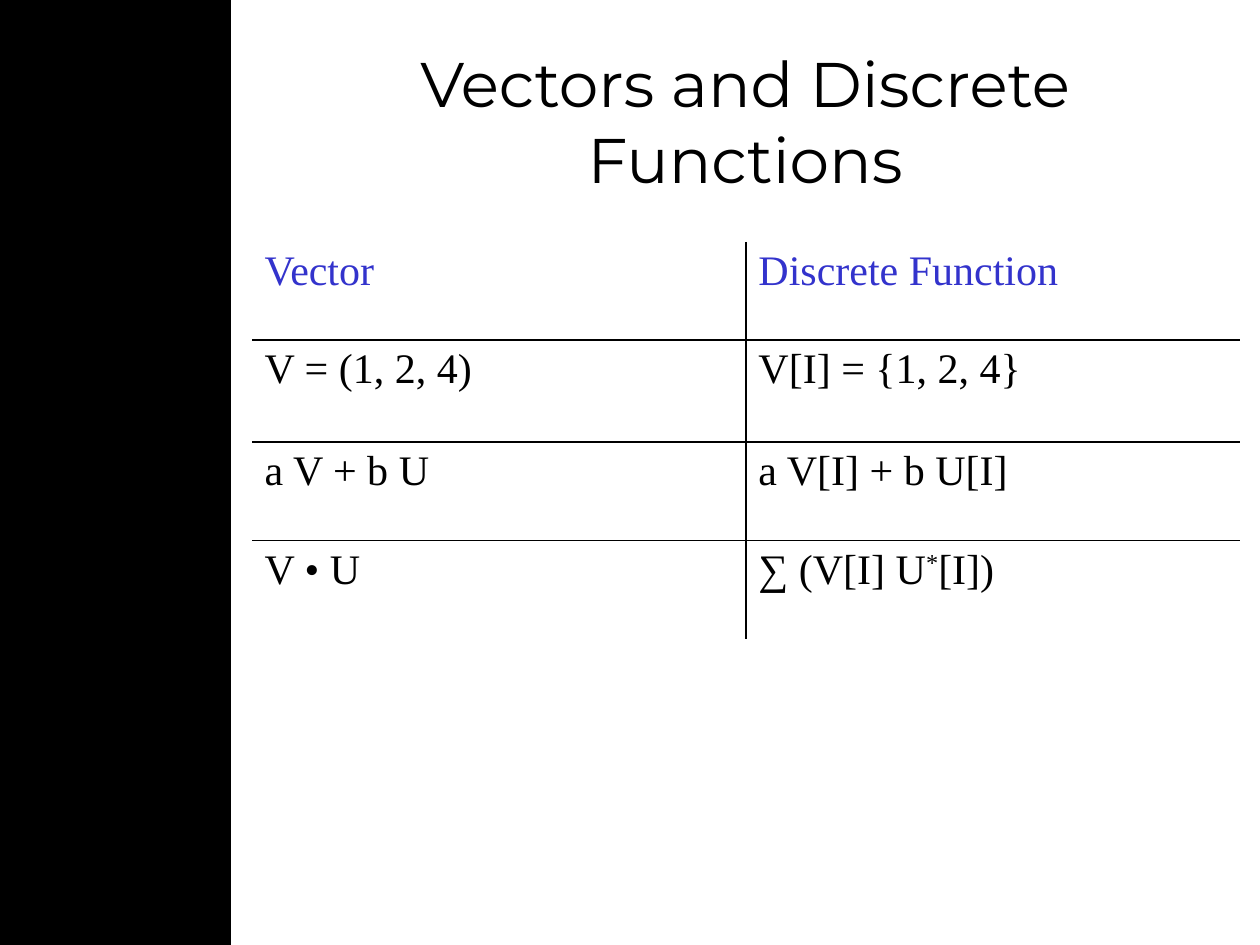
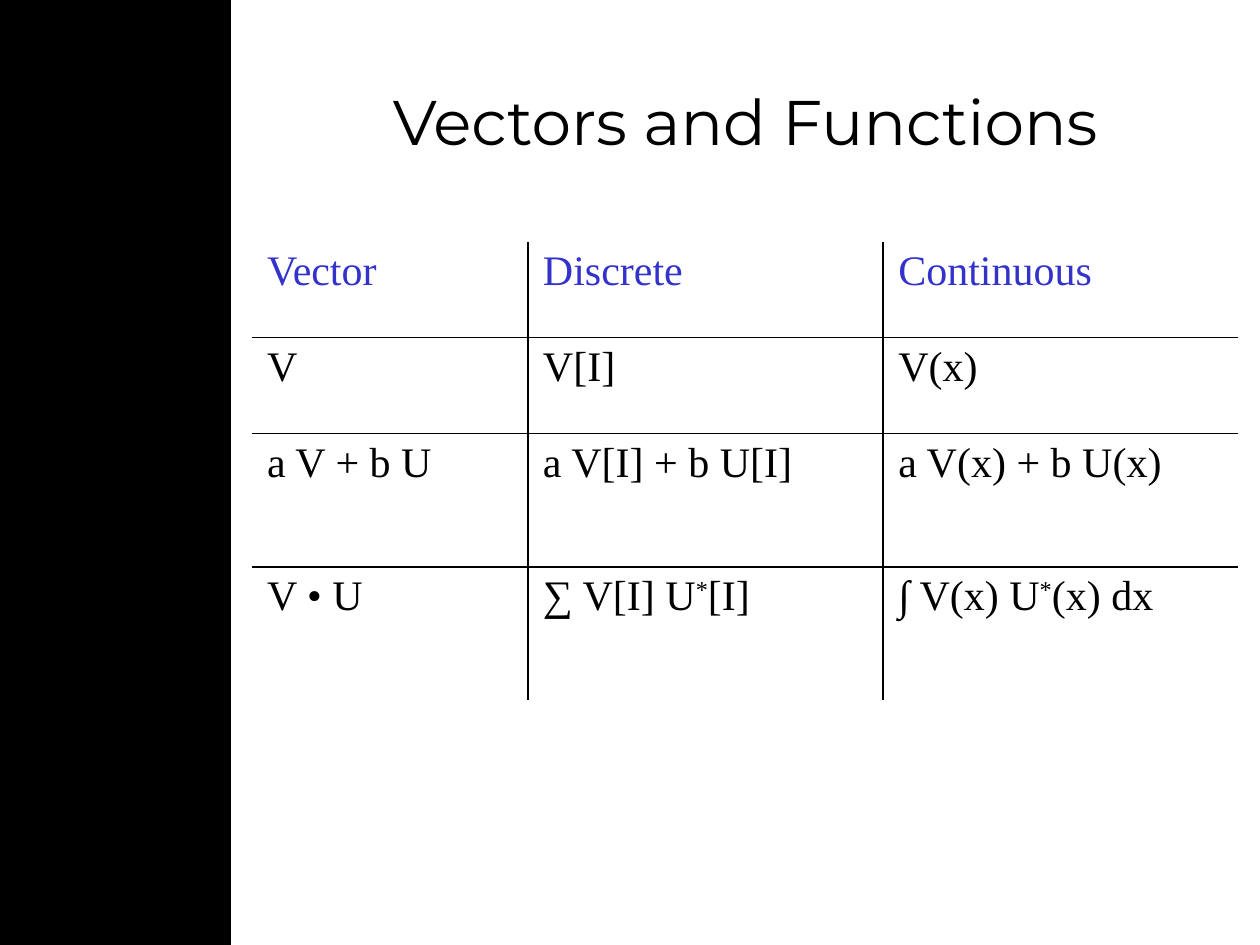
from lxml.etree import SubElement
from pptx import Presentation
from pptx.dml.color import RGBColor
from pptx.enum.shapes import MSO_SHAPE
from pptx.enum.text import MSO_ANCHOR, PP_ALIGN
from pptx.oxml.ns import qn
from pptx.util import Inches, Pt

# Content: column and row sizes in inches
SLIDES = [
    {
        "title": "Vectors and Discrete Functions",
        "cols": [3.92, 3.92], "rows": [0.78, 0.81, 0.78, 0.78], "inset": 0.1,
        "cells": [
            ["Vector", "Discrete Function"],
            ["V = (1, 2, 4)", "V[I] = {1, 2, 4}"],
            ["a V + b U", "a V[I] + b U[I]"],
            ["V • U", "∑ (V[I] U*[I])"],
        ],
    },
    {
        "title": "Vectors and Functions",
        "cols": [2.19, 2.82, 2.82], "rows": [0.76, 0.76, 1.06, 1.06], "inset": 0.12,
        "cells": [
            ["Vector", "Discrete", "Continuous"],
            ["V", "V[I]", "V(x)"],
            ["a V + b U", "a V[I] + b U[I]", "a V(x) + b U(x)"],
            ["V • U", "∑ V[I] U*[I]", "∫ V(x) U*(x) dx"],
        ],
    },
]

# Shared style
COLORS = {"paper": "FFFFFF", "ink": "000000", "header": "3333CC"}
TITLE_FONT, BODY_FONT = "Montserrat", "Times New Roman"
WIDTH, HEIGHT = 10, 7.5
BAND_W = 1.83
LEFT, CONTENT_W = 2, 7.83
TITLE_TOP, TITLE_H, TABLE_TOP = 0.33, 1.25, 1.92


def rgb(name):
    return RGBColor.from_string(COLORS[name])


def add_run(p, text, font, size, color, raised=False):
    r = p.add_run()
    r.text = text
    r.font.name, r.font.size = font, Pt(size)
    r.font.color.rgb = rgb(color)
    if raised:
        r.font._element.set("baseline", "30000")


def add_band(s):
    sp = s.shapes.add_shape(MSO_SHAPE.RECTANGLE, 0, 0, Inches(BAND_W), Inches(HEIGHT))
    sp.shadow.inherit = False
    sp.fill.solid()
    sp.fill.fore_color.rgb = rgb("ink")
    sp.line.color.rgb = rgb("ink")
    sp.line.width = Pt(0.75)


def add_title(s, text):
    box = s.shapes.add_textbox(Inches(LEFT), Inches(TITLE_TOP),
                               Inches(CONTENT_W), Inches(TITLE_H))
    tf = box.text_frame
    tf.word_wrap = True
    tf.vertical_anchor = MSO_ANCHOR.MIDDLE
    p = tf.paragraphs[0]
    p.alignment = PP_ALIGN.CENTER
    add_run(p, text, TITLE_FONT, 36, "ink")


def set_borders(cell, drawn):
    """Rule the sides that face another cell, and clear the outer ones."""
    tc_pr = cell._tc.get_or_add_tcPr()
    for side, visible in drawn.items():
        ln = SubElement(tc_pr, qn(f"a:ln{side}"), w=str(Pt(1)))
        if visible:
            fill = SubElement(ln, qn("a:solidFill"))
            SubElement(fill, qn("a:srgbClr"), val=COLORS["ink"])
        else:
            SubElement(ln, qn("a:noFill"))


def fill_cell(cell, text, color, inset):
    cell.margin_left = cell.margin_right = Inches(inset)
    cell.margin_top = cell.margin_bottom = Inches(0.05)
    p = cell.text_frame.paragraphs[0]
    # The conjugate star is raised
    for part in text.partition("*"):
        if part:
            add_run(p, part, BODY_FONT, 24, color, raised=part == "*")


def add_rule_table(s, cols, rows, cells, inset):
    table = s.shapes.add_table(len(rows), len(cols), Inches(LEFT), Inches(TABLE_TOP),
                               Inches(CONTENT_W), Inches(sum(rows))).table
    table.first_row = table.horz_banding = False
    for column, width in zip(table.columns, cols):
        column.width = Inches(width)
    for row, height in zip(table.rows, rows):
        row.height = Inches(height)
    for i, texts in enumerate(cells):
        for j, text in enumerate(texts):
            cell = table.cell(i, j)
            fill_cell(cell, text, "ink" if i else "header", inset)
            set_borders(cell, {"L": j > 0, "R": j < len(cols) - 1,
                               "T": i > 0, "B": i < len(rows) - 1})
            cell.fill.background()


def main():
    prs = Presentation()
    prs.slide_width, prs.slide_height = Inches(WIDTH), Inches(HEIGHT)
    for content in SLIDES:
        s = prs.slides.add_slide(prs.slide_layouts[6])
        s.background.fill.solid()
        s.background.fill.fore_color.rgb = rgb("paper")
        add_band(s)
        add_title(s, content["title"])
        add_rule_table(s, content["cols"], content["rows"],
                       content["cells"], content["inset"])
    prs.save("out.pptx")


if __name__ == "__main__":
    main()
